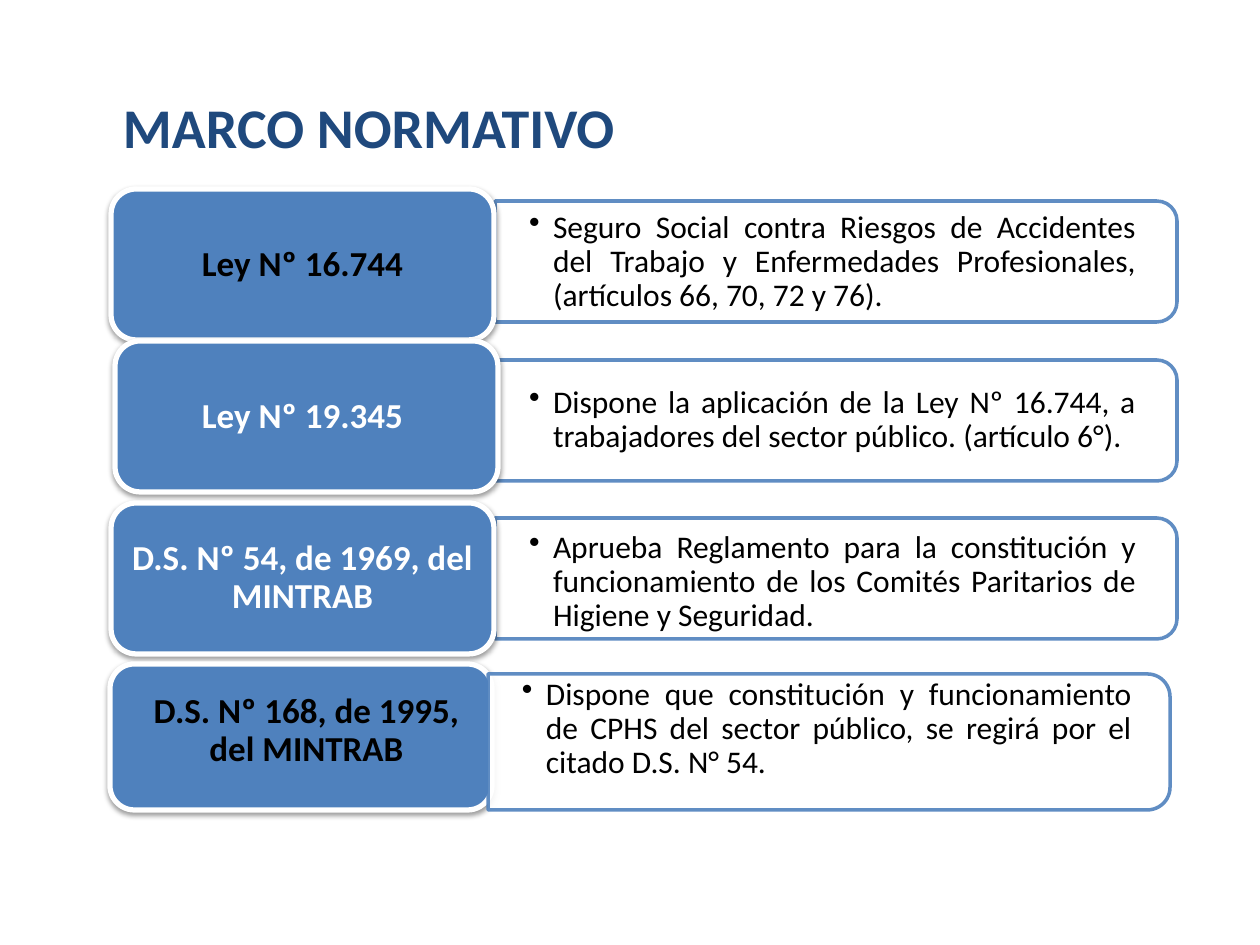
"""Build the slide on the legal framework: four norms, each with its description."""
from dataclasses import dataclass

from lxml.etree import SubElement
from pptx import Presentation
from pptx.dml.color import RGBColor
from pptx.enum.shapes import MSO_SHAPE
from pptx.enum.text import MSO_ANCHOR, PP_ALIGN
from pptx.oxml.ns import qn
from pptx.shapes.autoshape import Shape
from pptx.slide import Slide
from pptx.util import Emu, Pt

PX = 914400 / 126
FONT = "Calibri"
COLORS = {"blue": "4F81BD", "navy": "1F497D", "white": "FFFFFF", "black": "000000"}


@dataclass(frozen=True)
class Box:
    left: int
    top: int
    width: int
    height: int


@dataclass(frozen=True)
class Norm:
    name: str
    name_color: str
    description: str
    label: Box
    label_text: Box
    panel: Box
    panel_text: Box
    panel_in_front: bool = False


NORMS = [
    Norm("Ley Nº 16.744", "black",
         "Seguro Social contra Riesgos de Accidentes del Trabajo y Enfermedades "
         "Profesionales, (artículos 66, 70, 72 y 76).",
         Box(111, 189, 383, 151), Box(118, 197, 369, 136),
         Box(495, 201, 682, 121), Box(495, 207, 675, 110)),
    Norm("Ley Nº 19.345 ", "white",
         "Dispone la aplicación de la Ley Nº 16.744, a trabajadores del sector "
         "público. (artículo 6°).",
         Box(115, 341, 383, 151), Box(122, 349, 369, 136),
         Box(495, 360, 682, 121), Box(495, 365, 675, 110)),
    Norm("D.S. Nº 54, de 1969, del MINTRAB", "white",
         "Aprueba Reglamento para la constitución y funcionamiento de los Comités "
         "Paritarios de Higiene y Seguridad.",
         Box(111, 503, 383, 151), Box(118, 510, 369, 136),
         Box(495, 518, 682, 121), Box(495, 527, 675, 110)),
    Norm("D.S. Nº 168, de 1995, del MINTRAB", "black",
         "Dispone que constitución y funcionamiento de CPHS del sector público, se "
         "regirá por el citado D.S. N° 54.",
         Box(110, 664, 382, 146), Box(122, 674, 369, 115),
         Box(488, 674, 682, 136), Box(488, 673, 678, 113), panel_in_front=True),
]


def px(value: float) -> Emu:
    return Emu(round(value * PX))


def frame(box: Box) -> tuple[Emu, Emu, Emu, Emu]:
    return px(box.left), px(box.top), px(box.width), px(box.height)


def color(name: str) -> RGBColor:
    return RGBColor.from_string(COLORS[name])


def paint(shape: Shape, fill: str, line: str, line_width: float) -> None:
    shape.shadow.inherit = False
    shape.fill.solid()
    shape.fill.fore_color.rgb = color(fill)
    shape.line.color.rgb = color(line)
    shape.line.width = Pt(line_width)


def add_label(slide: Slide, box: Box) -> None:
    shape = slide.shapes.add_shape(MSO_SHAPE.ROUNDED_RECTANGLE, *frame(box))
    paint(shape, "blue", "white", 3)
    effects = shape._element.spPr.find(qn("a:effectLst"))
    shadow = SubElement(effects, qn("a:outerShdw"), blurRad=str(Pt(3.1)),
                        dist=str(Pt(1.6)), dir="5400000", rotWithShape="0")
    shadow_color = SubElement(shadow, qn("a:srgbClr"), val=COLORS["black"])
    SubElement(shadow_color, qn("a:alpha"), val="38000")


def add_panel(slide: Slide, box: Box) -> None:
    shift = (box.width - box.height) / 2
    shape = slide.shapes.add_shape(
        MSO_SHAPE.ROUND_2_SAME_RECTANGLE, px(box.left + shift), px(box.top - shift),
        px(box.height), px(box.width))
    shape.rotation = 90
    paint(shape, "white", "blue", 2)
    for fill_color in shape._element.spPr.iter(qn("a:srgbClr")):
        SubElement(fill_color, qn("a:alpha"), val="90000")


def add_text(slide: Slide, box: Box, text: str, size: int, text_color: str,
             insets: tuple[int, int], alignment: PP_ALIGN, bold: bool = False,
             bullet: bool = False, wrap: bool = True, spacing: float = 0.9) -> None:
    text_frame = slide.shapes.add_textbox(*frame(box)).text_frame
    text_frame.word_wrap = wrap
    text_frame.vertical_anchor = MSO_ANCHOR.MIDDLE
    text_frame.margin_left = text_frame.margin_right = px(insets[0])
    text_frame.margin_top = text_frame.margin_bottom = px(insets[1])
    paragraph = text_frame.paragraphs[0]
    paragraph.text = text
    if bullet:
        paragraph.level = 1
        properties = paragraph._p.get_or_add_pPr()
        properties.set("marL", str(px(24)))
        properties.set("indent", str(px(-24)))
        SubElement(properties, qn("a:buChar"), char="•")
    paragraph.alignment = alignment
    paragraph.line_spacing = spacing
    paragraph.font.name = FONT
    paragraph.font.size = Pt(size)
    paragraph.font.bold = bold
    paragraph.font.color.rgb = color(text_color)


def add_norm(slide: Slide, norm: Norm) -> None:
    def draw_label() -> None:
        add_label(slide, norm.label)
        add_text(slide, norm.label_text, norm.name, 20, norm.name_color, (10, 5),
                 PP_ALIGN.CENTER, bold=True)

    def draw_panel() -> None:
        add_panel(slide, norm.panel)
        add_text(slide, norm.panel_text, norm.description, 18, "black", (34, 17),
                 PP_ALIGN.JUSTIFY, bullet=True)

    steps = [draw_panel, draw_label]
    for draw in reversed(steps) if norm.panel_in_front else steps:
        draw()


def main() -> None:
    presentation = Presentation()
    presentation.slide_width, presentation.slide_height = px(1260), px(945)
    slide = presentation.slides.add_slide(presentation.slide_layouts[6])
    for norm in NORMS:
        add_norm(slide, norm)
    add_text(slide, Box(110, 86, 522, 81), "MARCO NORMATIVO", 32, "navy", (13, 6),
             PP_ALIGN.LEFT, bold=True, wrap=False, spacing=1.0)
    presentation.save("out.pptx")


if __name__ == "__main__":
    main()
